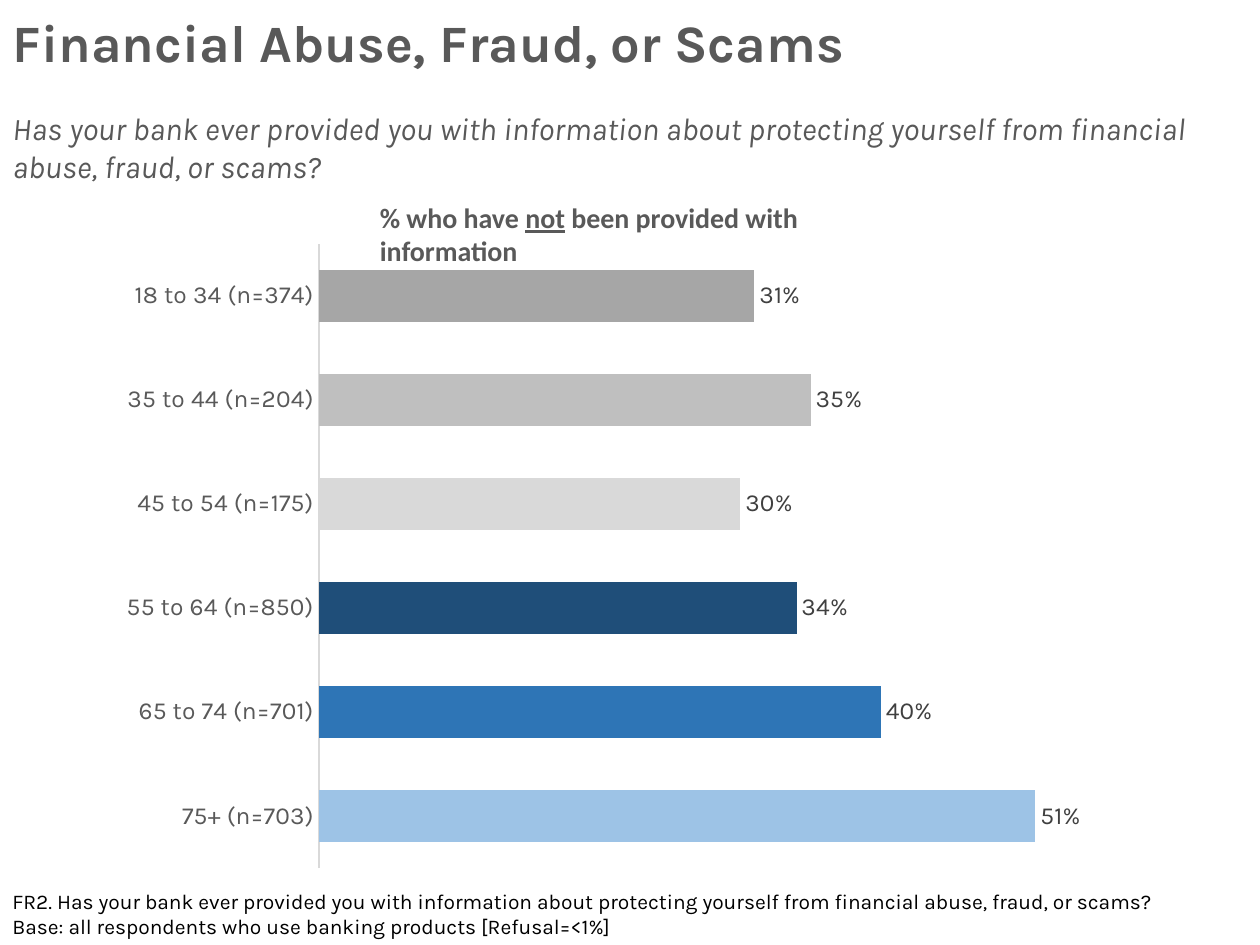
from lxml import etree
from pptx import Presentation
from pptx import util as u
from pptx.chart.data import CategoryChartData
from pptx.dml.color import RGBColor
from pptx.enum import chart as ch, text as tx
from pptx.oxml.ns import qn

Pt = u.Pt
HUE = {"text": "595959", "note": "000000", "label": "404040", "axis": "D9D9D9"}
BARS = [
    ("18 to 34 (n=374)", 0.31, "A6A6A6"),
    ("35 to 44 (n=204)", 0.35, "BFBFBF"),
    ("45 to 54 (n=175)", 0.30, "D9D9D9"),
    ("55 to 64 (n=850)", 0.34, "1F4E79"),
    ("65 to 74 (n=701)", 0.40, "2E75B6"),
    ("75+ (n=703)", 0.51, "9DC3E6"),
]


def style(font, size, hue="text", face="Karla", **marks):
    font.name, font.size = face, Pt(size)
    font.color.rgb = RGBColor.from_string(HUE[hue])
    for name, value in marks.items():
        setattr(font, name, value)


def write(para, words, **fmt):
    """Add words to a paragraph; a newline becomes a line break."""
    for i, line in enumerate(words.split("\n")):
        if i:
            para.add_line_break()
        run = para.add_run()
        run.text = line
        style(run.font, **fmt)


def place(shape, left, top, width, height):
    shape.left, shape.top = Pt(left), Pt(top)
    shape.width, shape.height = Pt(width), Pt(height)


class Deck:
    def __init__(self, width, height):
        self.prs = Presentation()
        self.prs.slide_width, self.prs.slide_height = Pt(width), Pt(height)
        self.slide = self.prs.slides.add_slide(self.prs.slide_layouts[5])

    def title(self, box, words, **fmt):
        shape = self.slide.shapes.title
        place(shape, *box)
        frame = shape.text_frame
        frame.auto_size = tx.MSO_AUTO_SIZE.NONE
        frame.vertical_anchor = tx.MSO_ANCHOR.MIDDLE
        para = frame.paragraphs[0]
        para.alignment, para.line_spacing = tx.PP_ALIGN.LEFT, 0.9
        write(para, words, **fmt)

    def text(self, box, *runs, wrap=True, **fmt):
        frame = self.slide.shapes.add_textbox(*map(Pt, box)).text_frame
        frame.word_wrap = wrap
        frame.auto_size = tx.MSO_AUTO_SIZE.SHAPE_TO_FIT_TEXT
        for words, marks in runs:
            write(frame.paragraphs[0], words, **fmt, **marks)

    def bars(self, box, rows, plot, top):
        names, vals, fills = zip(*rows)
        data = CategoryChartData(number_format="0%")
        data.categories = names
        data.add_series("Series 1", vals)
        chart = self.slide.shapes.add_chart(
            ch.XL_CHART_TYPE.BAR_CLUSTERED, *map(Pt, box), data).chart
        chart.has_legend = chart.has_title = False
        style(chart.font, 10, "note", "Calibri")

        # Axes
        cat, val = chart.category_axis, chart.value_axis
        cat.reverse_order = True
        cat.major_tick_mark = ch.XL_TICK_MARK.NONE
        cat.format.line.color.rgb = RGBColor.from_string(HUE["axis"])
        cat.format.line.width = Pt(0.75)
        style(cat.tick_labels.font, 14)
        val.minimum_scale, val.maximum_scale = 0, top
        val.has_major_gridlines = val.visible = False

        # Bars and labels
        group = chart.plots[0]
        group.gap_width, group.vary_by_categories = 100, False
        for i, fill in enumerate(fills):
            paint = group.series[0].points[i].format.fill
            paint.solid()
            paint.fore_color.rgb = RGBColor.from_string(fill)
        group.has_data_labels = True
        labels = group.data_labels
        labels.show_value = True
        labels.number_format, labels.number_format_is_linked = "0%", False
        labels.position = ch.XL_LABEL_POSITION.OUTSIDE_END
        style(labels.font, 14, "label")
        self.fix(chart, plot)

    def fix(self, chart, plot):
        """Pin the inner plot area to fractions of the chart."""
        area = chart.plots[0]._element.getparent()
        for old in area.findall(qn("c:layout")):
            area.remove(old)
        layout = etree.Element(qn("c:layout"))
        area.insert(0, layout)
        manual = etree.SubElement(layout, qn("c:manualLayout"))
        keys = ("layoutTarget", "xMode", "yMode", "x", "y", "w", "h")
        for key, value in zip(keys, ("inner", "edge", "edge", *plot)):
            etree.SubElement(manual, qn("c:" + key)).set("val", str(value))


def main():
    deck = Deck(720, 540)
    ask = ("Has your bank ever provided you with information about "
           "protecting yourself from financial abuse, fraud, or scams?")

    # Title and question
    deck.title((0, 0, 720, 52), "Financial Abuse, Fraud, or Scams",
               size=30, bold=True)
    deck.text((0, 59, 703, 73), (ask, {}), size=18, italic=True)

    # Chart and its heading
    deck.bars((26, 128, 651, 379.5), BARS, (0.24, 0.03, 0.74, 0.94), top=0.6)
    deck.text((210, 111, 328, 22), ("% who have ", {}),
              ("not", {"underline": True}),
              (" been provided with information", {}),
              wrap=False, size=16, face="Calibri", bold=True)

    # Footnote
    base = "Base: all respondents who use banking products [Refusal=<1%]"
    deck.text((0, 504, 720, 36), (f"FR2. {ask}\n{base}", {}),
              size=12, hue="note")

    deck.prs.save("out.pptx")


if __name__ == "__main__":
    main()
